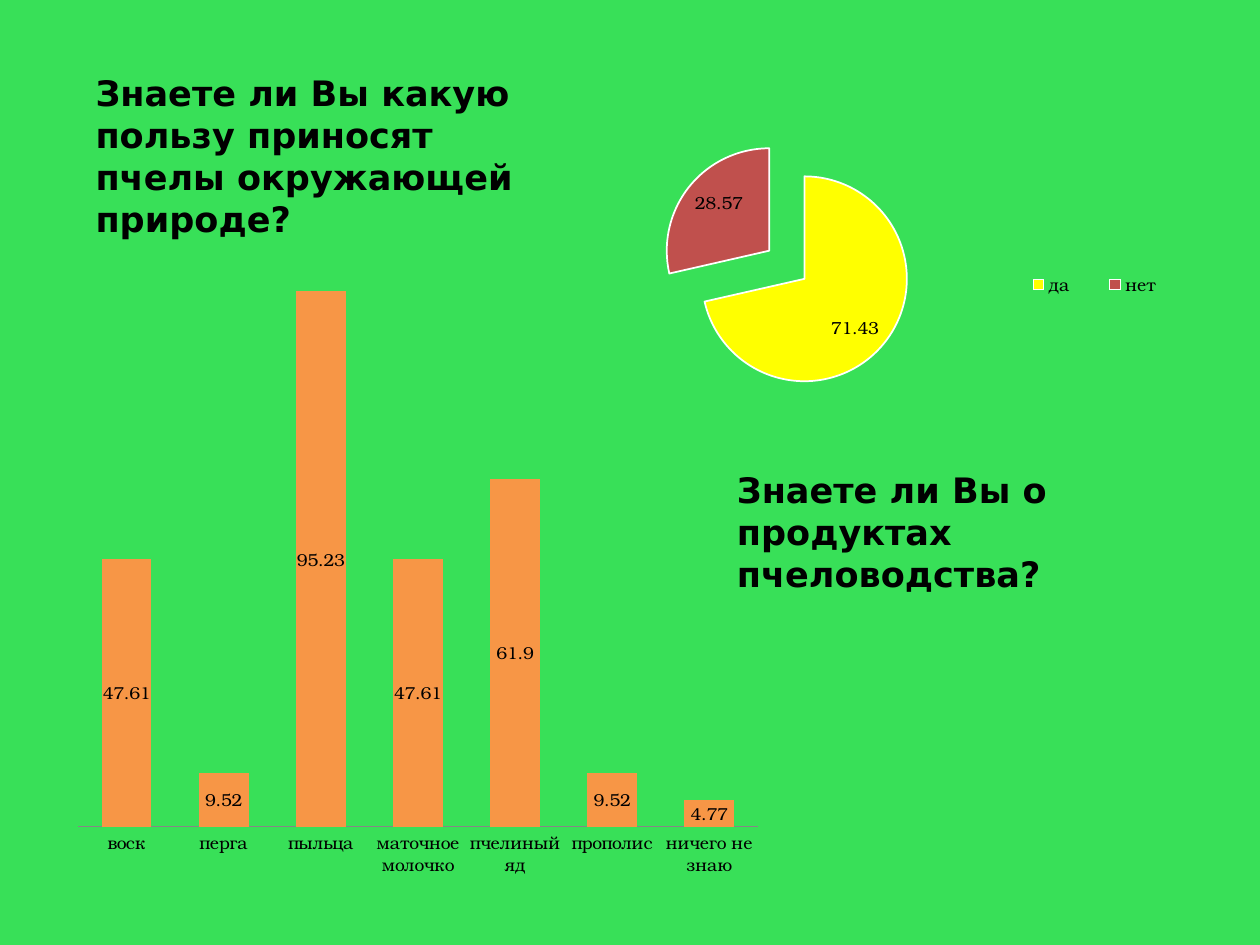
from lxml import etree
from pptx import Presentation
from pptx.chart.data import CategoryChartData
from pptx.dml.color import RGBColor
from pptx.enum.chart import XL_CHART_TYPE, XL_LABEL_POSITION, XL_LEGEND_POSITION, XL_TICK_MARK
from pptx.oxml import parse_xml
from pptx.oxml.ns import nsdecls, qn
from pptx.util import Inches, Pt

PIE = XL_CHART_TYPE.PIE
STACKED = XL_CHART_TYPE.COLUMN_STACKED
INSIDE_END = XL_LABEL_POSITION.INSIDE_END
CENTER = XL_LABEL_POSITION.CENTER
BOTTOM = XL_LEGEND_POSITION.BOTTOM
NO_TICK = XL_TICK_MARK.NONE

COLORS = {
    "background": "38E058",
    "text": "000000",
    "outline": "FFFFFF",
    "yes": "FFFF00",
    "no": "C0504D",
    "bar": "F79646",
    "axis": "868686",
}
HEADING = {"name": "DejaVu Sans", "size": Pt(20), "bold": True}
CHART_TEXT = {"name": "TeX Gyre Bonum", "size": Pt(10)}


def color(key):
    return RGBColor.from_string(COLORS[key])


def apply(target, values):
    for name, value in values.items():
        setattr(target, name, value)


def fill(format_, key):
    format_.fill.solid()
    format_.fill.fore_color.rgb = color(key)


def layout_xml(left, top, width, height, inner=False):
    layout = etree.Element(qn("c:layout"))
    manual = etree.SubElement(layout, qn("c:manualLayout"))
    values = {"xMode": "edge", "yMode": "edge", "x": left, "y": top, "w": width, "h": height}
    if inner:
        values = {"layoutTarget": "inner", **values}
    for name, value in values.items():
        etree.SubElement(manual, qn(f"c:{name}")).set("val", str(value))
    return layout


class SlideBuilder:
    def __init__(self, slide):
        self.slide = slide
        fill(slide.background, "background")

    def heading(self, text, left, top, width, height):
        box = self.slide.shapes.add_textbox(*map(Inches, (left, top, width, height)))
        box.text_frame.word_wrap = True
        run = box.text_frame.paragraphs[0].add_run()
        run.text = text
        apply(run.font, HEADING)
        run.font.color.rgb = color("text")

    def chart(self, kind, values, place, plot_area, label_position):
        data = CategoryChartData()
        data.categories = values.keys()
        data.add_series("Series 1", values.values())
        chart = self.slide.shapes.add_chart(kind, *map(Inches, place), data).chart
        apply(chart, {"has_title": False, "has_legend": False})
        apply(chart.font, CHART_TEXT)
        chart.font.color.rgb = color("text")
        area = chart._chartSpace.chart.plotArea
        for old_layout in area.findall(qn("c:layout")):
            area.remove(old_layout)
        area.insert(0, layout_xml(*plot_area, inner=True))
        plot = chart.plots[0]
        plot.has_data_labels = True
        apply(plot.data_labels, {"show_value": True, "show_percentage": False, "position": label_position})
        apply(plot.data_labels.font, CHART_TEXT)
        plot.data_labels.font.color.rgb = color("text")
        return chart

    def pie(self, values, point_colors, place, plot_area, legend_area):
        chart = self.chart(PIE, values, place, plot_area, INSIDE_END)
        plot = chart.plots[0]
        plot.vary_by_categories = True
        series = plot.series[0]
        for index, key in enumerate(point_colors):
            point = series.points[index].format
            fill(point, key)
            point.line.color.rgb = color("outline")
            point.line.width = Pt(1)
        explosion = etree.Element(qn("c:explosion"))
        explosion.set("val", "22")
        series._element.find(qn("c:dPt")).addprevious(explosion)
        outline = parse_xml(
            f'<a:ln {nsdecls("a")} w="6350"><a:solidFill><a:srgbClr val="{COLORS["text"]}"/></a:solidFill></a:ln>'
        )
        plot.data_labels.font._element.insert(0, outline)
        chart.has_legend = True
        apply(chart.legend, {"position": BOTTOM, "include_in_layout": False})
        apply(chart.legend.font, CHART_TEXT)
        legend = chart.legend._element
        for old_layout in legend.findall(qn("c:layout")):
            legend.remove(old_layout)
        legend.find(qn("c:legendPos")).addnext(layout_xml(*legend_area))

    def columns(self, values, place, plot_area):
        chart = self.chart(STACKED, values, place, plot_area, CENTER)
        plot = chart.plots[0]
        apply(plot, {"gap_width": 95, "overlap": 100, "vary_by_categories": False})
        fill(plot.series[0].format, "bar")
        apply(chart.value_axis, {
            "visible": False, "has_major_gridlines": False, "minimum_scale": 0, "maximum_scale": 100,
        })
        apply(chart.category_axis, {"major_tick_mark": NO_TICK, "minor_tick_mark": NO_TICK})
        chart.category_axis.format.line.color.rgb = color("axis")


def main():
    presentation = Presentation()
    apply(presentation, {"slide_width": Inches(10), "slide_height": Inches(7.5)})
    builder = SlideBuilder(presentation.slides.add_slide(presentation.slide_layouts[6]))
    builder.heading("Знаете ли Вы какую пользу приносят пчелы окружающей природе?", 0.66, 0.52, 3.71, 1.73)
    builder.pie(
        {"да": 71.43, "нет": 28.57},
        ("yes", "no"),
        place=(3.11, 1.11, 6.6, 2.42),
        plot_area=(0.01, 0, 0.93, 0.82),
        legend_area=(0.73, 0.36, 0.23, 0.23),
    )
    products = {
        "воск": 47.61,
        "перга": 9.52,
        "пыльца": 95.23,
        "маточное молочко": 47.61,
        "пчелиный яд": 61.9,
        "прополис": 9.52,
        "ничего не знаю": 4.77,
    }
    builder.columns(products, place=(0.51, 2.1, 5.51, 4.85), plot_area=(0.02, 0, 0.98, 0.93))
    builder.heading("Знаете ли Вы о продуктах пчеловодства?", 5.75, 3.67, 3.71, 1.73)
    presentation.save("out.pptx")


if __name__ == "__main__":
    main()
